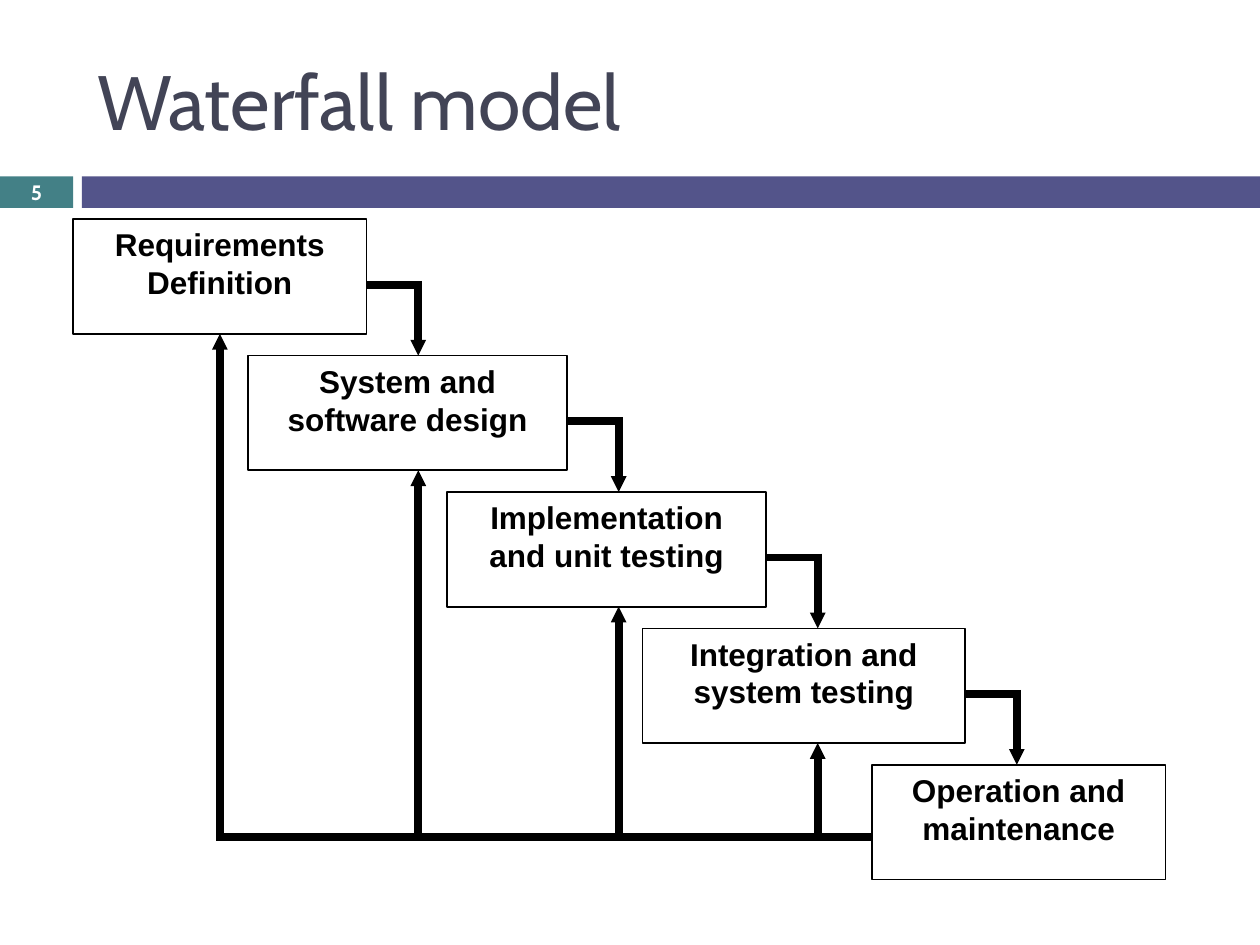
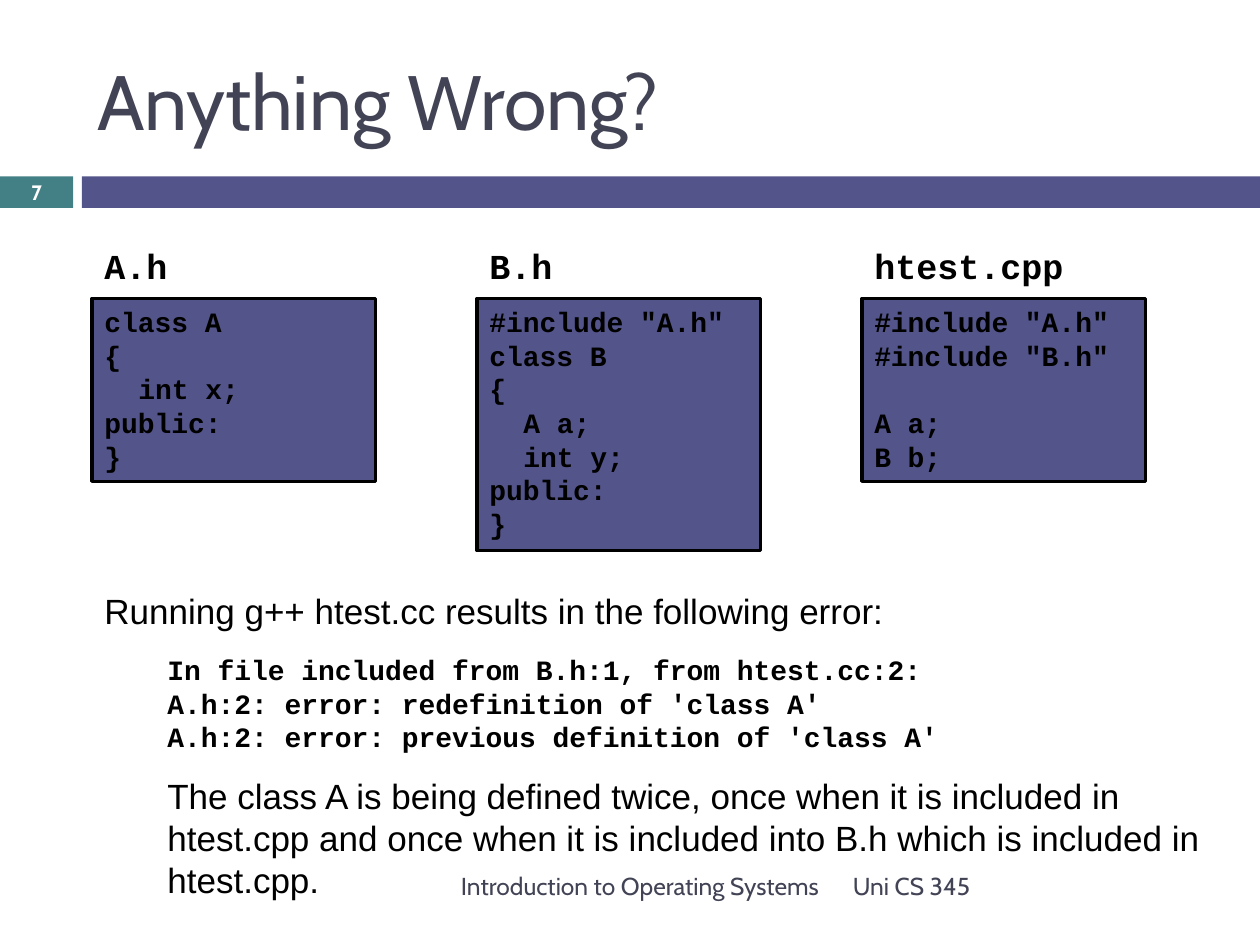
import dataclasses

import pptx
import pptx.dml.color
import pptx.enum.shapes
import pptx.enum.text
import pptx.oxml.ns
import pptx.util
from lxml import etree

Inches = pptx.util.Inches
Pt = pptx.util.Pt
RGB = pptx.dml.color.RGBColor.from_string
ALIGN = pptx.enum.text.PP_ALIGN
ANCHOR = pptx.enum.text.MSO_ANCHOR


@dataclasses.dataclass(frozen=True)
class Theme:
    heading_font: str = "Cabin"
    body_font: str = "Arial"
    code_font: str = "Courier New"
    ink: str = "000000"
    paper: str = "FFFFFF"
    heading: str = "424456"
    band: str = "53548A"
    number_band: str = "438086"
    title_size: float = 44
    body_size: float = 20
    stage_size: float = 18
    code_size: float = 16
    footer_size: float = 14
    number_size: float = 11.9
    line_height: float = 1.2
    flow_width: float = 4.5


THEME = Theme()


@dataclasses.dataclass(frozen=True)
class Line:
    """One paragraph; indent is in inches and before in points."""
    text: str
    size: float = THEME.body_size
    font: str = THEME.body_font
    color: str = THEME.ink
    bold: bool = False
    align: ALIGN = ALIGN.LEFT
    indent: float = 0
    before: float = 0


def code(text, size=THEME.code_size, indent=0, before=0):
    return Line(text, size, THEME.code_font, bold=True, indent=indent, before=before)


CODE_INDENT = 0.27
CODE_FILES = [
    ("A.h", [code("class A"), code("{"), code("int x;", indent=CODE_INDENT),
             code("public:"), code("}")]),
    ("B.h", [code('#include "A.h"'), code("class B"), code("{"),
             code("A a;", indent=CODE_INDENT), code("int y;", indent=CODE_INDENT),
             code("public:"), code("}")]),
    ("htest.cpp", [code('#include "A.h"'), code('#include "B.h"'),
                   code("A a;", before=THEME.code_size * THEME.line_height),
                   code("B b;")]),
]
CODE_HEIGHTS = [1.45, 2, 1.45]

ERROR_INDENT = 0.5
ERROR_REPORT = [
    Line("Running g++ htest.cc results in the following error:"),
    code("In file included from B.h:1, from htest.cc:2:", indent=ERROR_INDENT, before=12),
    code("A.h:2: error: redefinition of 'class A'", indent=ERROR_INDENT),
    code("A.h:2: error: previous definition of 'class A'", indent=ERROR_INDENT),
    Line("The class A is being defined twice, once when it is included in htest.cpp "
         "and once when it is included into B.h which is included in htest.cpp.",
         indent=ERROR_INDENT, before=12),
]

# Paragraphs, left edge and width of each stage
STAGES = [
    (["Requirements Definition"], 0.58, 2.33),
    (["System and", "software design"], 1.97, 2.53),
    (["Implementation and unit testing"], 3.55, 2.53),
    (["Integration and system testing"], 5.1, 2.56),
    (["Operation and maintenance"], 6.92, 2.33),
]
FIRST_TOP, LAST_TOP = 1.74, 6.07
STAGE_HEIGHT = 0.91
EXIT_DROP = 0.52
ELBOW_REACH = 0.41
RETURN_Y = 6.64


def write_lines(frame, lines, anchor=ANCHOR.TOP):
    frame.vertical_anchor = anchor
    for index, line in enumerate(lines):
        paragraph = frame.add_paragraph() if index else frame.paragraphs[0]
        paragraph.alignment = line.align
        paragraph.space_before = Pt(line.before)
        if line.font != THEME.heading_font:
            paragraph.line_spacing = Pt(line.size * THEME.line_height)
        if line.indent:
            properties = paragraph._p.get_or_add_pPr()
            properties.set("marL", str(Inches(line.indent)))
            properties.set("indent", "0")
        run = paragraph.add_run()
        run.text = line.text
        run.font.size = Pt(line.size)
        run.font.name = line.font
        run.font.bold = line.bold
        run.font.color.rgb = RGB(line.color)


def add_text(slide, left, top, width, height, lines, anchor=ANCHOR.TOP, wrap=True):
    frame = slide.shapes.add_textbox(
        Inches(left), Inches(top), Inches(width), Inches(height)).text_frame
    frame.word_wrap = wrap
    write_lines(frame, lines, anchor)
    return frame


def add_box(slide, left, top, width, height, fill, border=0, lines=()):
    box = slide.shapes.add_shape(
        pptx.enum.shapes.MSO_SHAPE.RECTANGLE,
        Inches(left), Inches(top), Inches(width), Inches(height))
    box.shadow.inherit = False
    box.fill.solid()
    box.fill.fore_color.rgb = RGB(fill)
    if border:
        box.line.color.rgb = RGB(THEME.ink)
        box.line.width = Pt(border)
    else:
        box.line.fill.background()
    box.text_frame.word_wrap = True
    write_lines(box.text_frame, lines)


def add_flow(slide, start, end, arrow=False):
    flow = slide.shapes.add_connector(
        pptx.enum.shapes.MSO_CONNECTOR.STRAIGHT,
        *(Inches(value) for value in (*start, *end)))
    flow.line.color.rgb = RGB(THEME.ink)
    flow.line.width = Pt(THEME.flow_width)
    qn = pptx.oxml.ns.qn
    properties = flow._element.spPr
    if arrow:
        etree.SubElement(properties.find(qn("a:ln")), qn("a:tailEnd"),
                         type="triangle", w="sm", len="sm")
    etree.SubElement(properties, qn("a:effectLst"))


def add_bent_arrow(slide, start, end):
    """Run level from start, then turn up or down to end."""
    corner = (end[0], start[1])
    add_flow(slide, start, corner)
    half = THEME.flow_width / 72 / 2
    outer = start[1] + (half if end[1] < start[1] else -half)
    add_flow(slide, (end[0], outer), end, arrow=True)


def add_titled_slide(deck, title, number):
    slide = deck.slides.add_slide(deck.slide_layouts[5])
    add_box(slide, 0, 1.4, 0.58, 0.25, THEME.number_band)
    add_box(slide, 0.65, 1.4, 9.35, 0.25, THEME.band)
    number_line = Line(number, THEME.number_size, THEME.heading_font,
                       THEME.paper, True, ALIGN.CENTER)
    number_frame = add_text(slide, 0, 1.39, 0.58, 0.27, [number_line], ANCHOR.MIDDLE)
    number_frame.margin_top = number_frame.margin_bottom = 0

    heading = slide.shapes.title
    heading.left, heading.top = Inches(0.67), Inches(0.25)
    heading.width, heading.height = Inches(8.92), Inches(1.08)
    heading.text_frame.auto_size = pptx.enum.text.MSO_AUTO_SIZE.NONE
    write_lines(heading.text_frame,
                [Line(title, THEME.title_size, THEME.heading_font, THEME.heading)],
                ANCHOR.MIDDLE)
    return slide


def add_footer(slide, left, width, text, align):
    line = Line(text, THEME.footer_size, THEME.heading_font, THEME.heading, align=align)
    add_text(slide, left, 6.83, width, 0.4, [line], ANCHOR.MIDDLE)


def build_waterfall(deck):
    slide = add_titled_slide(deck, "Waterfall model", "5")
    step = (LAST_TOP - FIRST_TOP) / (len(STAGES) - 1)
    return_start = (STAGES[-1][1], RETURN_Y)
    entry_x = STAGES[0][1] + STAGES[0][2] / 2
    for index, (texts, left, width) in enumerate(STAGES):
        top = FIRST_TOP + index * step
        lines = [Line(text, THEME.stage_size, bold=True, align=ALIGN.CENTER)
                 for text in texts]
        add_box(slide, left, top, width, STAGE_HEIGHT, THEME.paper, 1, lines)
        if index < len(STAGES) - 1:
            add_bent_arrow(slide, return_start, (entry_x, top + STAGE_HEIGHT))
            right = left + width
            entry_x = right + ELBOW_REACH
            add_bent_arrow(slide, (right, top + EXIT_DROP), (entry_x, top + step))


def build_include_error(deck):
    slide = add_titled_slide(deck, "Anything Wrong?", "7")
    add_footer(slide, 6.67, 2.92, "Uni CS 345", ALIGN.LEFT)
    add_footer(slide, 0.67, 5.93, "Introduction to Operating Systems", ALIGN.RIGHT)
    for column, ((name, lines), height) in enumerate(zip(CODE_FILES, CODE_HEIGHTS)):
        left = 0.73 + column * 3.055
        add_box(slide, left, 2.37, 2.25, height, THEME.band, 2, lines)
        name_width = 0.21 + len(name) * THEME.body_size * 0.6 / 72
        add_text(slide, left, 1.89, name_width, 0.44,
                 [code(name, THEME.body_size)], wrap=False)
    add_text(slide, 0.73, 4.63, 8.99, 2.26, ERROR_REPORT)


def main():
    deck = pptx.Presentation()
    deck.slide_width, deck.slide_height = Inches(10), Inches(7.5)
    build_waterfall(deck)
    build_include_error(deck)
    deck.save("out.pptx")


if __name__ == "__main__":
    main()
